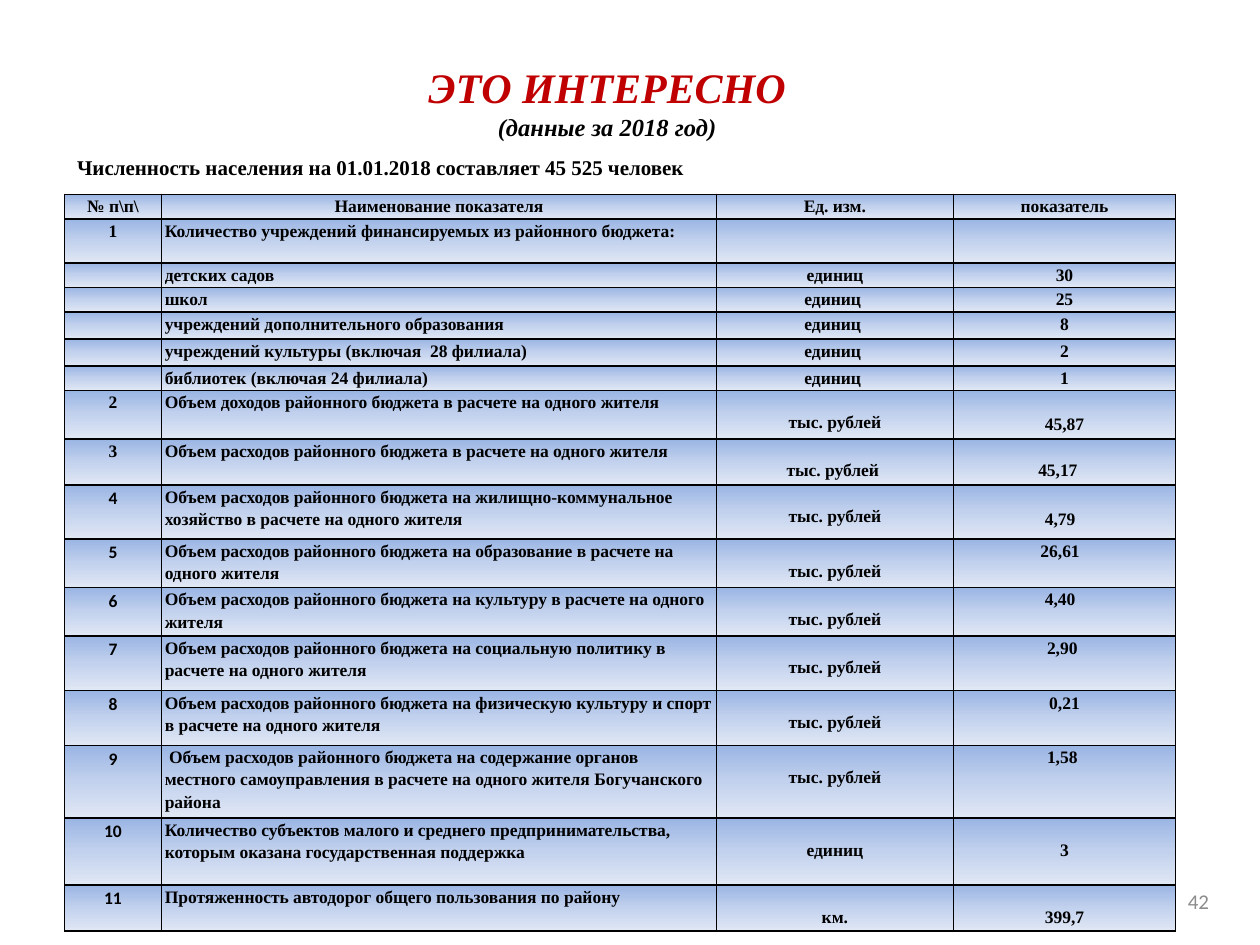
from lxml import etree
from pptx import Presentation
from pptx.dml.color import RGBColor
from pptx.enum import text as t
from pptx.oxml import ns
from pptx.util import Pt

COLORS = {"title": "C00000", "ink": "000000", "number": "8C8C8C",
          "top": "9AB5E4", "middle": "C2D1ED", "bottom": "E1E8F5"}
SERIF, SANS = "Times New Roman", "Calibri"
LEFT, CENTER, RIGHT, JUSTIFY = (t.PP_ALIGN.LEFT, t.PP_ALIGN.CENTER,
                                t.PP_ALIGN.RIGHT, t.PP_ALIGN.JUSTIFY)


def write(para, content, size=10, font=SERIF, color="ink", bold=True,
          italic=False, align=LEFT, spacing=None):
    para.alignment = align
    if spacing:
        para.line_spacing = spacing
    if not content:
        etree.SubElement(para._p, ns.qn("a:endParaRPr"), sz=str(size * 100))
        return
    span = para.add_run()
    span.text = content
    span.font.size = Pt(size)
    span.font.name = font
    span.font.bold = bold
    span.font.italic = italic
    span.font.color.rgb = RGBColor.from_string(COLORS[color])


def paint(cell):
    props = cell._tc.get_or_add_tcPr()
    for side in ("lnL", "lnR", "lnT", "lnB"):
        line = etree.SubElement(props, ns.qn("a:" + side), w="12700")
        solid = etree.SubElement(line, ns.qn("a:solidFill"))
        etree.SubElement(solid, ns.qn("a:srgbClr"), val=COLORS["ink"])
    gradient = etree.SubElement(props, ns.qn("a:gradFill"), rotWithShape="1")
    stops = etree.SubElement(gradient, ns.qn("a:gsLst"))
    for position, name in ((0, "top"), (50000, "middle"), (100000, "bottom")):
        stop = etree.SubElement(stops, ns.qn("a:gs"), pos=str(position))
        etree.SubElement(stop, ns.qn("a:srgbClr"), val=COLORS[name])
    etree.SubElement(gradient, ns.qn("a:lin"), ang="5400000", scaled="0")


deck = Presentation()
deck.slide_width, deck.slide_height = Pt(720), Pt(540)
page = deck.slides.add_slide(deck.slide_layouts[6])

box = page.shapes.add_textbox(Pt(674), Pt(500.5), Pt(24), Pt(28.75))
box.text_frame.word_wrap = True
box.text_frame.margin_left = Pt(0)
box.text_frame.vertical_anchor = t.MSO_ANCHOR.MIDDLE
write(box.text_frame.paragraphs[0], "42", size=12, font=SANS, color="number",
      bold=False, align=RIGHT)

box = page.shapes.add_textbox(Pt(167), Pt(31.5), Pt(360), Pt(53))
box.text_frame.word_wrap = True
write(box.text_frame.paragraphs[0], "ЭТО ИНТЕРЕСНО", size=24, color="title",
      italic=True, align=CENTER)
write(box.text_frame.add_paragraph(), "(данные за 2018 год)", size=14,
      italic=True, align=CENTER)

UNIT, MONEY = "единиц", "тыс. рублей"
EXPENSES = "Объем расходов районного бюджета на "
PER_HEAD = " в расчете на одного жителя"
LOW, LOWER = 11.2, 12.5
rows = [
    (14, "№ п\\п\\", "Наименование показателя", "Ед. изм.", "показатель", 0, 0, 0),
    (25.2, "1", "Количество учреждений финансируемых из районного бюджета:", "", "", 0, 0, 0),
    (14, "", "детских садов", UNIT, "30", 0, 0, 0),
    (14, "", "школ", UNIT + " ", "25", 0, 0, 0),
    (15.5, "", "учреждений дополнительного образования", UNIT + " ", "8", 0, 0, 0),
    (15.5, "", "учреждений культуры (включая  28 филиала)", UNIT + " ", "2", 0, 0, 0),
    (14, "", "библиотек (включая 24 филиала)", UNIT + " ", "1", 0, 0, 0),
    (27.7, "2", "Объем доходов районного бюджета" + PER_HEAD, MONEY, "45,87", LOW, LOWER, 0),
    (26.2, "3", "Объем расходов районного бюджета" + PER_HEAD, MONEY + " ", "45,17", LOW, LOW, 7.5),
    (31, "4", EXPENSES + "жилищно-коммунальное хозяйство" + PER_HEAD, MONEY, "4,79", LOW, LOWER, 5),
    (27.7, "5", EXPENSES + "образование" + PER_HEAD, MONEY, "26,61", LOW, 0, 5),
    (27.7, "6", EXPENSES + "культуру" + PER_HEAD, MONEY, "4,40", LOW, 0, 5),
    (31.3, "7", EXPENSES + "социальную политику" + PER_HEAD, MONEY, "2,90", LOW, 0, 2.5),
    (31.2, "8", EXPENSES + "физическую культуру и спорт" + PER_HEAD, MONEY, "0,21", LOW, 0, 0),
    (41.6, "9", " " + EXPENSES + "содержание органов местного самоуправления" + PER_HEAD
     + " Богучанского района", MONEY, "1,58", LOW, 0, 2.5),
    (38.3, "10", "Количество субъектов малого и среднего предпринимательства, "
     "которым оказана государственная поддержка", UNIT, "3", LOW, LOW, 0),
    (26.2, "11", "Протяженность автодорог общего пользования по району", "км.", "399,7", LOW, LOW, 0),
]
widths = [55.3, 317.2, 135.4, 127]
table = page.shapes.add_table(len(rows), len(widths), Pt(36.9), Pt(111.1),
                              Pt(sum(widths)), Pt(sum(row[0] for row in rows))).table
table.first_row = table.horz_banding = False
for column, width in zip(table.columns, widths):
    column.width = Pt(width)
for index, (height, *texts, unit_drop, value_drop, shift) in enumerate(rows):
    table.rows[index].height = Pt(height)
    name_align = CENTER if index == 0 else JUSTIFY if index < 7 or index == 16 else LEFT
    number_font = SANS if index > 8 else SERIF
    for place, content in enumerate(texts):
        cell = table.cell(index, place)
        cell.margin_left = Pt(2)
        cell.margin_right = Pt(2 + (shift if place == 3 else 0))
        cell.margin_top = Pt((0, 0, unit_drop, value_drop)[place])
        cell.margin_bottom = Pt(0)
        paint(cell)
        write(cell.text_frame.paragraphs[0], content, spacing=1.15,
              font=number_font if place == 0 else SERIF,
              align=name_align if place == 1 else CENTER)

box = page.shapes.add_textbox(Pt(37), Pt(84.5), Pt(365), Pt(21.8))
box.text_frame.word_wrap = False
box.text_frame.vertical_anchor = t.MSO_ANCHOR.MIDDLE
write(box.text_frame.paragraphs[0],
      "Численность населения на 01.01.2018 составляет 45 525 человек", size=12)

deck.save("out.pptx")
